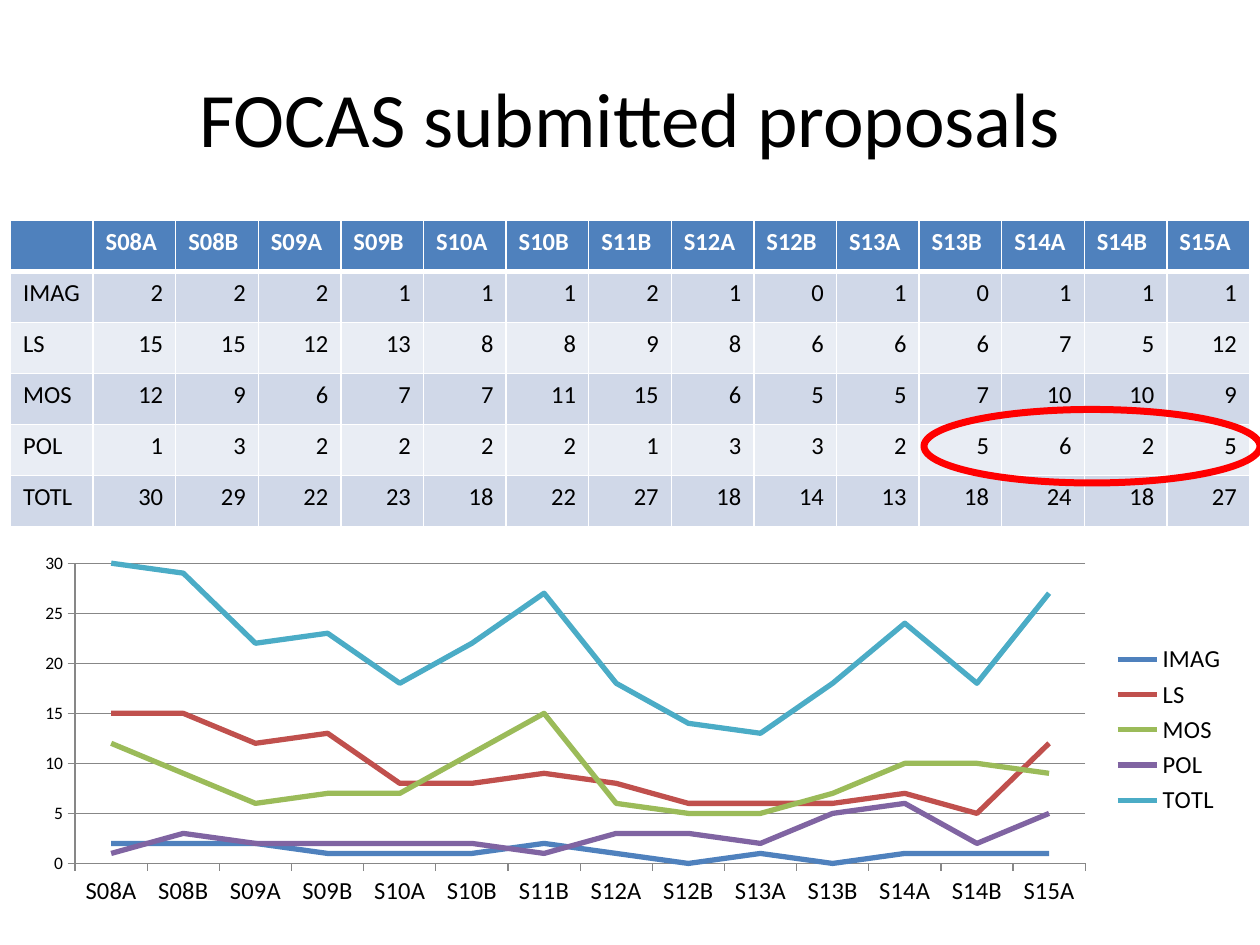
import pptx
import pptx.chart.data
import pptx.dml.color
import pptx.enum.chart
import pptx.enum.shapes
import pptx.enum.text
import pptx.util
from lxml import etree
from pptx.oxml.ns import qn

Pt = pptx.util.Pt
ALIGN = pptx.enum.text.PP_ALIGN
FONT = "Calibri"
COLORS = {
    "text": "000000",
    "white": "FFFFFF",
    "header": "4F81BD",
    "band_dark": "D0D8E8",
    "band_light": "E9EDF4",
    "axis": "878787",
    "highlight": "FF0000",
    "IMAG": "4F81BD",
    "LS": "C0504D",
    "MOS": "9BBB59",
    "POL": "8064A2",
    "TOTL": "4BACC6",
}
SEMESTERS = ["S08A", "S08B", "S09A", "S09B", "S10A", "S10B", "S11B",
             "S12A", "S12B", "S13A", "S13B", "S14A", "S14B", "S15A"]
PROPOSALS = {
    "IMAG": [2, 2, 2, 1, 1, 1, 2, 1, 0, 1, 0, 1, 1, 1],
    "LS": [15, 15, 12, 13, 8, 8, 9, 8, 6, 6, 6, 7, 5, 12],
    "MOS": [12, 9, 6, 7, 7, 11, 15, 6, 5, 5, 7, 10, 10, 9],
    "POL": [1, 3, 2, 2, 2, 2, 1, 3, 3, 2, 5, 6, 2, 5],
    "TOTL": [30, 29, 22, 23, 18, 22, 27, 18, 14, 13, 18, 24, 18, 27],
}


def rgb(name):
    return pptx.dml.color.RGBColor.from_string(COLORS[name])


def format_font(font, size, color="text", bold=False):
    font.name = FONT
    font.size = Pt(size)
    font.bold = bold
    font.color.rgb = rgb(color)


def write_text(frame, text, size=14, color="text", bold=False, align=ALIGN.LEFT):
    paragraph = frame.paragraphs[0]
    paragraph.alignment = align
    run = paragraph.add_run()
    run.text = text
    format_font(run.font, size, color, bold)


def set_borders(cell, bottom_width):
    """Draw white borders; call before the fill, which must follow them in the XML."""
    properties = cell._tc.get_or_add_tcPr()
    for side, width in (("L", 1), ("R", 1), ("T", 1), ("B", bottom_width)):
        line = etree.SubElement(properties, qn(f"a:ln{side}"), w=str(Pt(width)))
        fill = etree.SubElement(line, qn("a:solidFill"))
        etree.SubElement(fill, qn("a:srgbClr"), val=COLORS["white"])


def place_title(slide, left, top, width, height):
    title = slide.shapes.title
    title.left, title.top = Pt(left), Pt(top)
    title.width, title.height = Pt(width), Pt(height)
    title.text_frame.vertical_anchor = pptx.enum.text.MSO_ANCHOR.MIDDLE
    write_text(title.text_frame, "FOCAS submitted proposals", size=44, align=ALIGN.CENTER)


def add_proposal_table(slide, left, top, width, height):
    rows = [["", *SEMESTERS]]
    rows += [[mode, *map(str, counts)] for mode, counts in PROPOSALS.items()]
    table = slide.shapes.add_table(
        len(rows), len(rows[0]), Pt(left), Pt(top), Pt(width), Pt(height)).table
    for column in table.columns:
        column.width = Pt(width / len(rows[0]))
    for row_index, texts in enumerate(rows):
        table.rows[row_index].height = Pt(height / len(rows))
        is_header = row_index == 0
        band = "band_dark" if row_index % 2 else "band_light"
        for column_index, text in enumerate(texts):
            cell = table.cell(row_index, column_index)
            set_borders(cell, bottom_width=3 if is_header else 1)
            cell.fill.solid()
            cell.fill.fore_color.rgb = rgb("header" if is_header else band)
            is_count = column_index > 0 and not is_header
            write_text(cell.text_frame, text, bold=is_header,
                       color="white" if is_header else "text",
                       align=ALIGN.RIGHT if is_count else ALIGN.LEFT)


def format_axis(axis, size):
    axis.major_tick_mark = pptx.enum.chart.XL_TICK_MARK.OUTSIDE
    axis.minor_tick_mark = pptx.enum.chart.XL_TICK_MARK.NONE
    axis.format.line.color.rgb = rgb("axis")
    format_font(axis.tick_labels.font, size)


def add_proposal_chart(slide, left, top, width, height):
    data = pptx.chart.data.CategoryChartData()
    data.categories = SEMESTERS
    for mode, counts in PROPOSALS.items():
        data.add_series(mode, counts)
    chart = slide.shapes.add_chart(
        pptx.enum.chart.XL_CHART_TYPE.LINE,
        Pt(left), Pt(top), Pt(width), Pt(height), data).chart
    format_font(chart.font, 10)
    chart.has_title = False
    chart.has_legend = True
    chart.legend.position = pptx.enum.chart.XL_LEGEND_POSITION.RIGHT
    chart.legend.include_in_layout = False
    format_font(chart.legend.font, 14)

    format_axis(chart.category_axis, 14)
    format_axis(chart.value_axis, 10)
    chart.value_axis.minimum_scale = 0
    chart.value_axis.maximum_scale = 30
    chart.value_axis.major_unit = 5
    chart.value_axis.has_major_gridlines = True
    chart.value_axis.major_gridlines.format.line.color.rgb = rgb("axis")

    plot = chart.plots[0]
    plot.vary_by_categories = False
    for series in plot.series:
        series.smooth = False
        series.marker.style = pptx.enum.chart.XL_MARKER_STYLE.NONE
        series.format.line.width = Pt(3)
        series.format.line.color.rgb = rgb(series.name)


def add_highlight(slide, left, top, width, height):
    ellipse = slide.shapes.add_shape(
        pptx.enum.shapes.MSO_SHAPE.OVAL, Pt(left), Pt(top), Pt(width), Pt(height))
    ellipse.shadow.inherit = False
    ellipse.fill.background()
    ellipse.line.color.rgb = rgb("highlight")
    ellipse.line.width = Pt(4)


def main():
    presentation = pptx.Presentation()
    presentation.slide_width, presentation.slide_height = Pt(720), Pt(540)
    slide = presentation.slides.add_slide(presentation.slide_layouts.get_by_name("Title Only"))
    place_title(slide, 36, 21.6, 648, 90)
    add_proposal_table(slide, 6, 126, 708, 175)
    add_proposal_chart(slide, 12, 312, 696, 210)
    add_highlight(slide, 528, 234, 192, 42)
    presentation.save("out.pptx")


if __name__ == "__main__":
    main()
